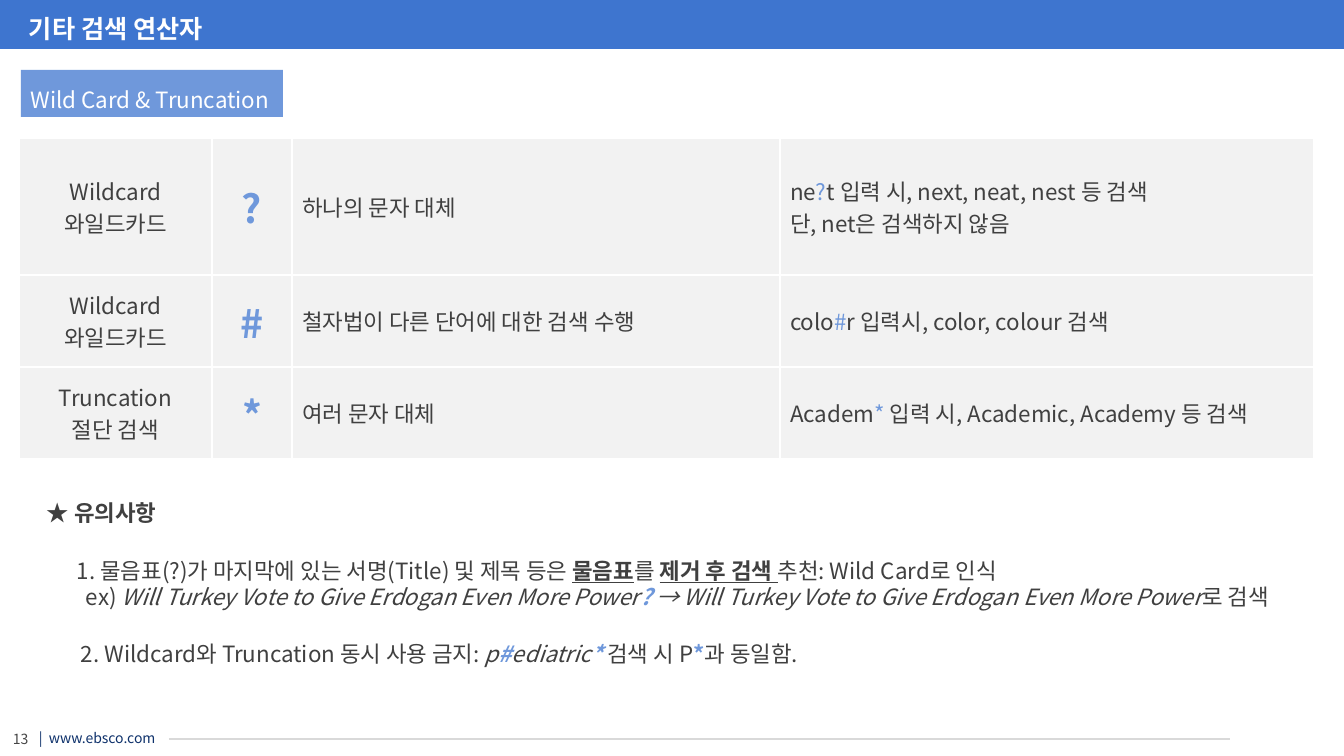
"""Build the slide on wildcard and truncation search operators."""
from dataclasses import dataclass
from typing import NamedTuple

from lxml import etree
from pptx import Presentation
from pptx.dml.color import RGBColor
from pptx.enum.shapes import MSO_CONNECTOR, MSO_SHAPE
from pptx.enum.text import MSO_ANCHOR, PP_ALIGN
from pptx.oxml.ns import qn
from pptx.util import Emu, Pt

LEFT, CENTER = PP_ALIGN.LEFT, PP_ALIGN.CENTER
TOP, MIDDLE = MSO_ANCHOR.TOP, MSO_ANCHOR.MIDDLE
RECT, STRAIGHT = MSO_SHAPE.RECTANGLE, MSO_CONNECTOR.STRAIGHT
SLIDE_W, SLIDE_H = 1344, 756
SCALE = 12192000 / SLIDE_W
FONT = "Noto Sans CJK KR"
COLORS = {
    "title": "3E75CF", "accent": "6F98DB", "ink": "404040", "cell": "F2F2F2",
    "white": "FFFFFF", "rule": "D9D9D9", "site": "0E316B", "number": "454545",
}


class Span(NamedTuple):
    text: str
    style: str = ""
    color: str = "ink"
    size: int = 16


@dataclass
class Para:
    spans: list[Span]
    align: PP_ALIGN = LEFT
    line: float = 1.0
    before: int = 0
    indent: int = 0
    tab: int = 0


@dataclass
class Box:
    x: int
    y: int
    w: int
    h: int
    paras: list[Para]
    anchor: MSO_ANCHOR = TOP
    wrap: bool = True


@dataclass
class Bar:
    x: int
    y: int
    w: int
    h: int
    color: str


@dataclass
class Operator:
    names: list[str]
    symbol: str
    meaning: str
    examples: list[list[Span]]


BARS = [Bar(21, 70, 262, 47, "accent"), Bar(0, 0, SLIDE_W, 49, "title")]
COLS, ROWS = [193, 80, 488, 534], [137, 92, 92]
OPERATORS = [
    Operator(["Wildcard", "와일드카드"], "?", "하나의 문자 대체", [
        [Span("ne"), Span("?", color="accent"), Span("t 입력 시, next, neat, nest 등 검색")],
        [Span("단, net은 검색하지 않음")]]),
    Operator(["Wildcard", "와일드카드"], "#", "철자법이 다른 단어에 대한 검색 수행", [
        [Span("colo"), Span("#", color="accent"), Span("r 입력시, color, colour 검색")]]),
    Operator(["Truncation", "절단 검색"], "*", "여러 문자 대체", [
        [Span("Academ"), Span("* ", color="accent"),
         Span("입력 시, Academic, Academy 등 검색")]]),
]
HEADLINE = "Will Turkey Vote to Give Erdogan Even More Power"
TIGHT = 0.83
NOTES = [
    Para([Span("★ 유의사항", "b")], line=TIGHT),
    Para([Span("1. 물음표(?)가 마지막에 있는 서명(Title) 및 제목 등은 "), Span("물음표", "bu"),
          Span("를 "), Span("제거 후 검색 ", "bu"), Span("추천: Wild Card로 인식")],
         line=TIGHT, before=25, indent=30),
    Para([Span("ex) "), Span(HEADLINE, "i"), Span("? ", "bi", "accent"),
          Span(f"→ {HEADLINE}", "i"), Span("로 검색")],
         line=TIGHT, before=3, indent=39),
    Para([Span("2. Wildcard와 Truncation 동시 사용 금지: "), Span("p", "i"),
          Span("#", "bi", "accent"), Span("ediatric", "i"), Span("* ", "bi", "accent"),
          Span("검색 시 P"), Span("*", "b", "accent"), Span("과 동일함.")],
         line=TIGHT, before=25, indent=34),
]
BOXES = [
    Box(29, 725, 196, 27, [Para([Span("|\twww.ebsco.com", color="site", size=10)], tab=10)]),
    Box(0, 725, 41, 27, [Para([Span("13", color="number", size=10)], CENTER)], MIDDLE),
    Box(37, 499, 1277, 195, NOTES),
    Box(19, 5, 1159, 33, [Para([Span("기타 검색 연산자", "b", "white", 18)], line=1.1)]),
    Box(19, 68, 262, 47, [Para([Span("Wild Card & Truncation", color="white")],
                               CENTER, 1.5)], wrap=False),
]


def px(n: float) -> Emu:
    return Emu(round(n * SCALE))


def rgb(name: str) -> RGBColor:
    return RGBColor.from_string(COLORS[name])


def write(tf, paras: list[Para]) -> None:
    for i, para in enumerate(paras):
        p = tf.paragraphs[0] if i == 0 else tf.add_paragraph()
        pPr = p._p.get_or_add_pPr()
        if para.indent:
            pPr.set("marL", str(px(para.indent)))
            pPr.set("indent", "0")
        if para.tab:
            tabs = etree.SubElement(pPr, qn("a:tabLst"))
            etree.SubElement(tabs, qn("a:tab"), pos=str(px(para.tab)), algn="l")
        p.alignment, p.line_spacing, p.space_before = para.align, para.line, Pt(para.before)
        for span in para.spans:
            r = p.add_run()
            r.text = span.text
            f = r.font
            f.name, f.size = FONT, Pt(span.size)
            f.bold, f.italic, f.underline = ("b" in span.style, "i" in span.style,
                                             "u" in span.style)
            f.color.rgb = rgb(span.color)
            etree.SubElement(r._r.get_or_add_rPr(), qn("a:ea"), typeface=FONT)


def add_bar(slide, bar: Bar) -> None:
    sp = slide.shapes.add_shape(RECT, px(bar.x), px(bar.y), px(bar.w), px(bar.h))
    sp.shadow.inherit = False
    sp.fill.solid()
    sp.fill.fore_color.rgb = rgb(bar.color)
    sp.line.fill.background()


def add_box(slide, box: Box) -> None:
    tf = slide.shapes.add_textbox(px(box.x), px(box.y), px(box.w), px(box.h)).text_frame
    tf.word_wrap, tf.vertical_anchor = box.wrap, box.anchor
    write(tf, box.paras)


def add_rule(slide, x1: int, x2: int, y: int) -> None:
    line = slide.shapes.add_connector(STRAIGHT, px(x1), px(y), px(x2), px(y))
    line.line.color.rgb = rgb("rule")
    line.line.width = Pt(1)
    etree.SubElement(line._element.spPr, qn("a:effectLst"))


def fill_cell(cell, paras: list[Para]) -> None:
    cell.vertical_anchor = MIDDLE
    cell.fill.solid()
    cell.fill.fore_color.rgb = rgb("cell")
    tcPr = cell._tc.get_or_add_tcPr()
    for i, side in enumerate("LRTB"):
        ln = etree.Element(qn(f"a:ln{side}"), w=str(Pt(1.5)))
        fill = etree.SubElement(ln, qn("a:solidFill"))
        etree.SubElement(fill, qn("a:srgbClr"), val=COLORS["white"])
        tcPr.insert(i, ln)
    write(cell.text_frame, paras)


def add_operators(slide) -> None:
    table = slide.shapes.add_table(len(ROWS), len(COLS), px(19), px(138),
                                   px(sum(COLS)), px(sum(ROWS))).table
    table.first_row = table.horz_banding = False
    for col, width in zip(table.columns, COLS):
        col.width = px(width)
    for row, height, op in zip(table.rows, ROWS, OPERATORS):
        row.height = px(height)
        contents = [
            [Para([Span(name)], CENTER) for name in op.names],
            [Para([Span(op.symbol, "b", "accent", 28)], CENTER)],
            [Para([Span(op.meaning)])],
            [Para(spans) for spans in op.examples],
        ]
        for cell, paras in zip(row.cells, contents):
            fill_cell(cell, paras)


def main() -> None:
    prs = Presentation()
    prs.slide_width, prs.slide_height = px(SLIDE_W), px(SLIDE_H)
    slide = prs.slides.add_slide(prs.slide_layouts[6])
    add_rule(slide, 169, 1230, 739)
    for bar in BARS:
        add_bar(slide, bar)
    add_operators(slide)
    for box in BOXES:
        add_box(slide, box)
    prs.save("out.pptx")


if __name__ == "__main__":
    main()
